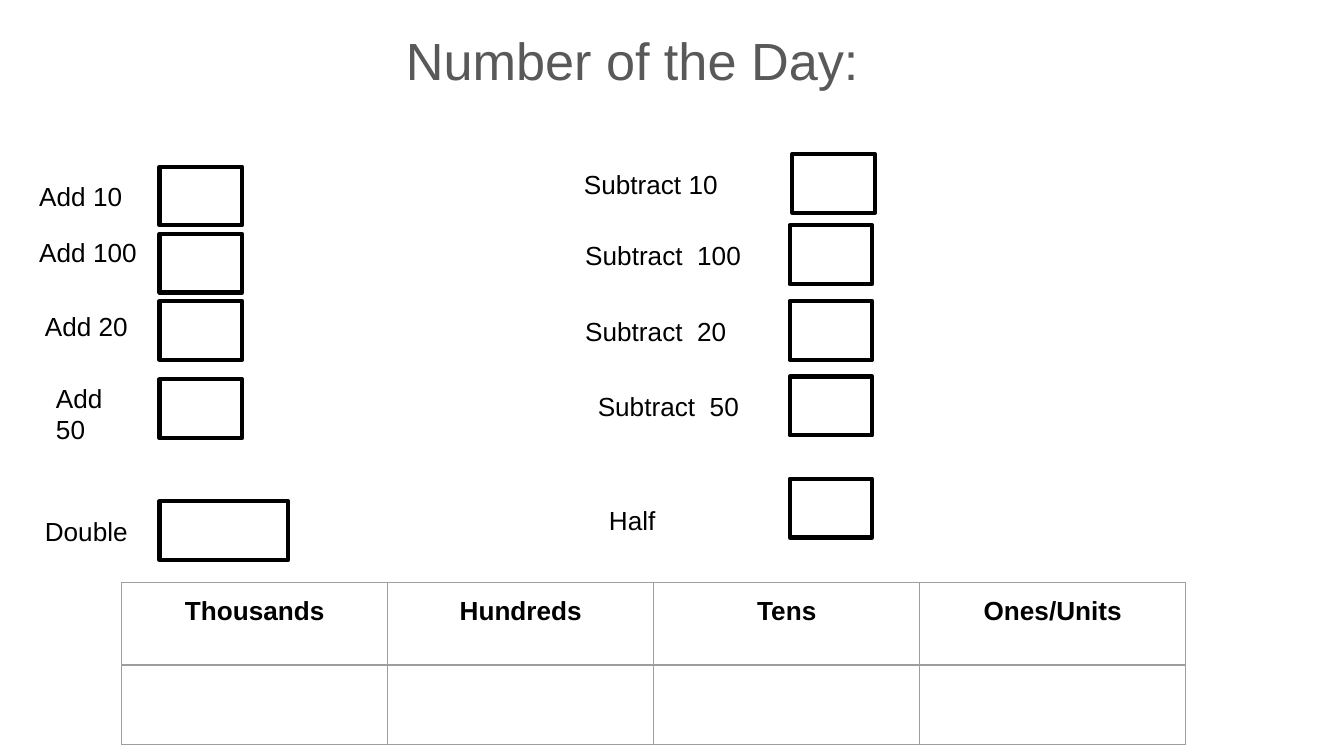
from lxml import etree
from pptx import Presentation
from pptx.dml.color import RGBColor
from pptx.enum.shapes import MSO_SHAPE
from pptx.enum.text import MSO_ANCHOR, PP_ALIGN
from pptx.oxml.ns import qn
from pptx.util import Pt

PX = 9525  # 96 px to the inch
RECT = MSO_SHAPE.RECTANGLE
TOP = MSO_ANCHOR.TOP
CENTER = PP_ALIGN.CENTER
COLORS = {"title": "595959", "ink": "000000", "grid": "9E9E9E"}


def px(*lengths):
    return [n * PX for n in lengths]


def style(p, size, color, bold=False):
    p.font.name = "Arial"
    p.font.size = Pt(size)
    p.font.bold = bold
    p.font.color.rgb = RGBColor.from_string(COLORS[color])


prs = Presentation()
prs.slide_width, prs.slide_height = px(960, 540)
s = prs.slides.add_slide(prs.slide_layouts[5])

# Title, centred a little left of the middle
title = s.shapes.title
title.left, title.top, title.width, title.height = px(20, 10, 895, 84)
tf = title.text_frame
tf.margin_left, tf.margin_top, tf.margin_right, tf.margin_bottom = px(10, 10, 42, 10)
tf.vertical_anchor = TOP
tf.text = "Number of the Day:"
tf.paragraphs[0].alignment = CENTER
style(tf.paragraphs[0], 28, "title")

# Prompts with answer boxes: text, label x, y, width, height, box x, y, width
prompts = [
    ("Add 10", 18, 119, 208, 42, 114, 119, 59),
    ("Add 100", 18, 159, 208, 42, 114, 167, 59),
    ("Add 20", 22, 212, 208, 42, 114, 215, 59),
    ("Add 50", 30, 263, 78, 64, 114, 271, 59),
    ("Double", 22, 358, 92, 42, 114, 358, 92),
    ("Subtract 10", 407, 110, 150, 42, 566, 110, 59),
    ("Subtract  100", 408, 161, 141, 42, 564, 161, 59),
    ("Subtract  20", 408, 215, 126, 42, 564, 215, 59),
    ("Subtract  50", 417, 269, 126, 42, 564, 269, 59),
    ("Half", 425, 350, 101, 42, 564, 342, 59),
]
for text, x, y, w, h, box_x, box_y, box_w in prompts:
    label = s.shapes.add_textbox(*px(x, y, w, h))
    tf = label.text_frame
    tf.word_wrap = True
    tf.margin_left, tf.margin_top, tf.margin_right, tf.margin_bottom = px(10, 10, 10, 10)
    tf.text = text
    style(tf.paragraphs[0], 14, "ink")

    box = s.shapes.add_shape(RECT, *px(box_x, box_y, box_w, 42))
    box.shadow.inherit = False
    box.fill.background()
    box.line.color.rgb = RGBColor.from_string(COLORS["ink"])
    box.line.width = Pt(2.25)
    etree.SubElement(box.line._get_or_add_ln(), qn("a:round"))

# Place value table
headings = ["Thousands", "Hundreds", "Tens", "Ones/Units"]
table = s.shapes.add_table(2, len(headings), *px(87, 416, 760, 116)).table
table.first_row = table.horz_banding = False
for column in table.columns:
    column.width = 190 * PX
for row, height in zip(table.rows, px(59, 57)):
    row.height = height
for cell, heading in zip(table.rows[0].cells, headings):
    cell.text = heading
for cell in table.iter_cells():
    cell.margin_left, cell.margin_top, cell.margin_right, cell.margin_bottom = px(10, 10, 10, 10)
    p = cell.text_frame.paragraphs[0]
    p.alignment = CENTER
    style(p, 14, "ink", bold=True)
    # Borders go before the fill in the cell properties
    tcPr = cell._tc.get_or_add_tcPr()
    for side in ("a:lnL", "a:lnR", "a:lnT", "a:lnB"):
        ln = etree.SubElement(tcPr, qn(side), w=str(Pt(0.75)))
        fill = etree.SubElement(ln, qn("a:solidFill"))
        etree.SubElement(fill, qn("a:srgbClr"), val=COLORS["grid"])
    cell.fill.background()

prs.save("out.pptx")
